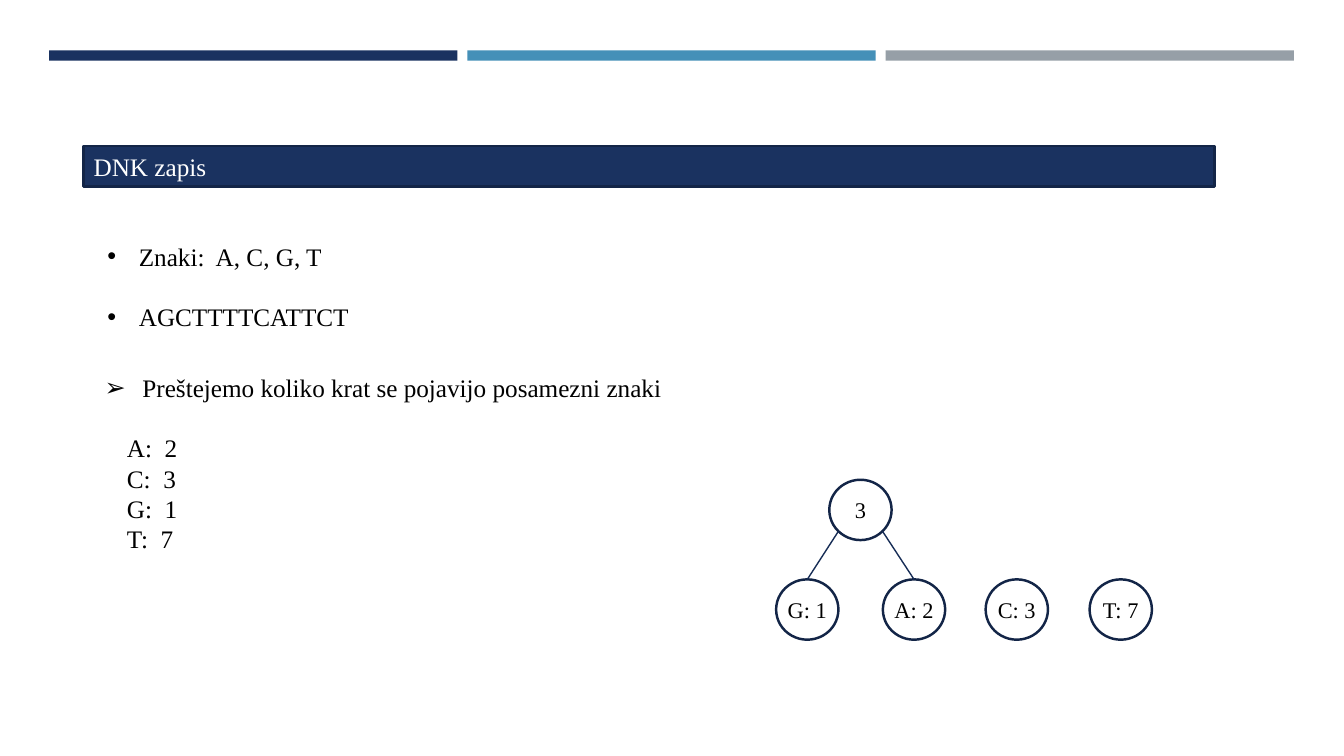
from math import sqrt

from lxml import etree
from pptx import Presentation
from pptx.dml.color import RGBColor
from pptx.enum.shapes import MSO_CONNECTOR, MSO_SHAPE
from pptx.enum.text import MSO_ANCHOR, PP_ALIGN
from pptx.oxml.ns import qn
from pptx.util import Cm, Pt

RECT, OVAL = MSO_SHAPE.RECTANGLE, MSO_SHAPE.OVAL
LINE = MSO_CONNECTOR.STRAIGHT
LEFT, CENTER = PP_ALIGN.LEFT, PP_ALIGN.CENTER
TOP, MIDDLE = MSO_ANCHOR.TOP, MSO_ANCHOR.MIDDLE

FONT = "Times New Roman"
NAVY, BLUE, GREY = "1A3260", "4590B8", "969FA7"
EDGE, LINK = "132547", "172D56"
BLACK, WHITE = "000000", "FFFFFF"
PITCH = Pt(21.7)
NODE_W, NODE_H = 1.57, 1.52


def color(code):
    return RGBColor.from_string(code)


def apply(target, values):
    for name, value in values.items():
        setattr(target, name, value)


def add_shape(slide, kind, box, fill=None, edge=None):
    shape = slide.shapes.add_shape(kind, *map(Cm, box))
    shape.shadow.inherit = False
    if fill:
        shape.fill.solid()
        shape.fill.fore_color.rgb = color(fill)
    else:
        shape.fill.background()
    if edge:
        shape.line.color.rgb = color(edge)
        shape.line.width = Pt(1.75)
    else:
        shape.line.fill.background()
    return shape


def write(para, text, size=18, ink=BLACK, **form):
    run = para.add_run()
    run.text = text
    apply(run.font, {"name": FONT, "size": Pt(size)})
    run.font.color.rgb = color(ink)
    apply(para, form)


def add_mark(para, mark, indent):
    """Give the paragraph a bullet with a hanging indent in cm."""
    props = para._p.get_or_add_pPr()
    props.set("marL", str(Cm(indent)))
    props.set("indent", str(-Cm(indent)))
    etree.SubElement(props, qn("a:buFont"), typeface="Arial")
    etree.SubElement(props, qn("a:buChar"), char=mark)


def add_text(slide, box, lines, gap=0, mark=None, indent=0):
    """Add a text box; gap is the space before each later line."""
    frame = slide.shapes.add_textbox(*map(Cm, box)).text_frame
    apply(frame, {"word_wrap": True, "vertical_anchor": TOP})
    for i, text in enumerate(lines):
        para = frame.add_paragraph() if i else frame.paragraphs[0]
        write(para, text, alignment=LEFT, line_spacing=PITCH,
              space_before=gap if i else 0)
        if mark:
            add_mark(para, mark, indent)


def add_node(slide, left, top, text):
    frame = add_shape(slide, OVAL, (left, top, NODE_W, NODE_H),
                      edge=EDGE).text_frame
    apply(frame, {"word_wrap": False, "vertical_anchor": MIDDLE,
                  "margin_left": 0, "margin_right": 0,
                  "margin_top": 0, "margin_bottom": 0})
    write(frame.paragraphs[0], text, size=16, alignment=CENTER)


def add_link(slide, root, child, side):
    """Join a child's top to the root's lower left (-1) or right (1)."""
    reach = 1 / sqrt(2)
    ends = (child[0] + NODE_W / 2, child[1],
            root[0] + NODE_W / 2 * (1 + side * reach),
            root[1] + NODE_H / 2 * (1 + reach))
    link = slide.shapes.add_connector(LINE, *map(Cm, ends))
    link.line.color.rgb = color(LINK)
    link.line.width = Pt(1)
    etree.SubElement(link._element.spPr, qn("a:effectLst"))


def add_tree(slide):
    root, base = (20.9, 12.09), 14.6
    leaves = {"G: 1": 19.56, "A: 2": 22.25, "C: 3": 24.84, "T: 7": 27.46}
    for text, left in leaves.items():
        add_node(slide, left, base, text)
    add_node(slide, *root, "3")
    for text, side in (("G: 1", -1), ("A: 2", 1)):
        add_link(slide, root, (leaves[text], base), side)


def add_title(slide, text):
    frame = add_shape(slide, RECT, (2.11, 3.68, 28.5, 1.02),
                      NAVY, EDGE).text_frame
    apply(frame, {"word_wrap": True, "vertical_anchor": MIDDLE})
    write(frame.paragraphs[0], text, ink=WHITE, alignment=LEFT)


def main():
    deck = Presentation()
    apply(deck, {"slide_width": Cm(33.87), "slide_height": Cm(19.05)})
    slide = deck.slides.add_slide(deck.slide_layouts[6])
    for i, fill in enumerate((NAVY, BLUE, GREY)):
        add_shape(slide, RECT, (1.24 + 10.54 * i, 1.27, 10.29, 0.26), fill)
    add_title(slide, "DNK zapis")
    add_text(slide, (2.46, 5.94, 23.37, 2.57),
             ["Znaki:  A, C, G, T", "AGCTTTTCATTCT"],
             gap=PITCH, mark="•", indent=0.79)
    add_text(slide, (2.39, 9.25, 16.21, 1.02),
             ["Preštejemo koliko krat se pojavijo posamezni znaki"],
             mark="➢", indent=0.95)
    add_text(slide, (2.95, 10.77, 1.98, 3.33),
             ["A:  2", "C:  3", "G:  1", "T:  7"])
    add_tree(slide)
    deck.save("out.pptx")


if __name__ == "__main__":
    main()
